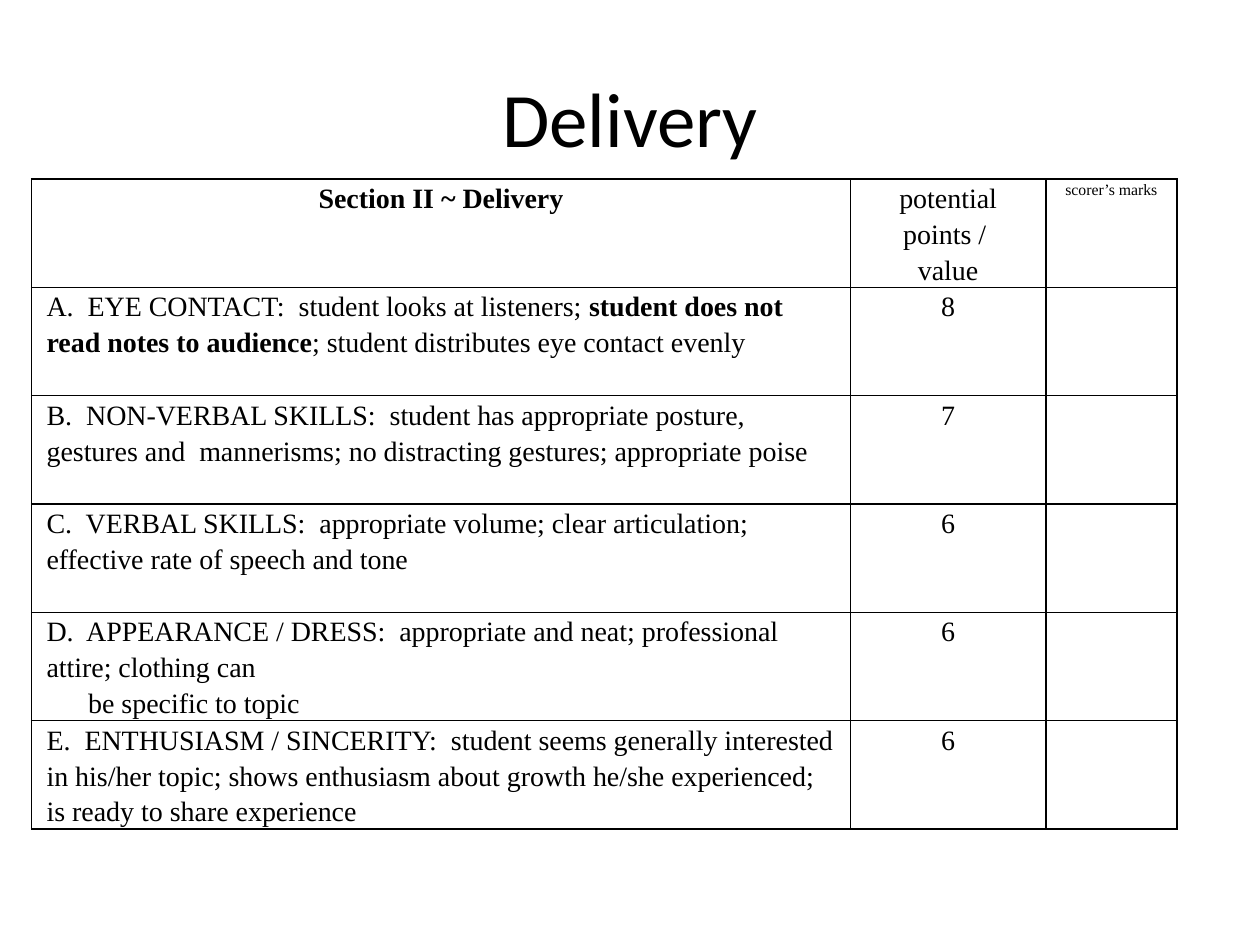
from dataclasses import dataclass

import lxml.etree
import pptx
import pptx.dml.color
import pptx.enum.text
import pptx.oxml.ns
import pptx.util
from pptx.util import Inches

ALIGN = pptx.enum.text.PP_ALIGN


@dataclass(frozen=True)
class Theme:
    ink: str = "000000"
    title_font: str = "Calibri"
    table_font: str = "Times New Roman"
    title_size: int = 44
    table_size: int = 16
    small_size: int = 9
    border_width: int = 1
    line_spacing: float = 1.15


THEME = Theme()
COLUMN_WIDTHS = (6.5, 1.55, 1.04)
ROW_HEIGHT = 0.86
CONTINUATION_INDENT = 0.33

# A cell is a list of paragraphs; a paragraph is a list of (text, bold) spans.
HEADER = (
    [[("Section II ~ Delivery", True)]],
    [[("potential points / ", False)], [("value", False)]],
    [[("scorer’s marks", False)]],
)
CRITERIA = (
    ([[("A.  EYE CONTACT:  student looks at listeners; ", False),
       ("student does not read notes to audience", True),
       ("; student distributes eye contact evenly", False)]], 8),
    ([[("B.  NON-VERBAL SKILLS:  student has appropriate posture, gestures and  "
        "mannerisms; no distracting gestures; appropriate poise", False)]], 7),
    ([[("C.  VERBAL SKILLS:  appropriate volume; clear articulation; "
        "effective rate of speech and tone", False)]], 6),
    ([[("D.  APPEARANCE / DRESS:  appropriate and neat; professional attire; "
        "clothing can", False)],
      [("be specific to topic", False)]], 6),
    ([[("E.  ENTHUSIASM / SINCERITY:  student seems generally interested in "
        "his/her topic; shows enthusiasm about growth he/she experienced; "
        "is ready to share experience", False)]], 6),
)


def style_font(font, name, size, bold=False):
    font.name = name
    font.size = pptx.util.Pt(size)
    font.bold = bold
    font.color.rgb = pptx.dml.color.RGBColor.from_string(THEME.ink)


def add_title(slide, text):
    title = slide.shapes.title
    title.left, title.top = Inches(0.5), Inches(0.3)
    title.width, title.height = Inches(9), Inches(1.25)
    title.text_frame.text = text
    title.text_frame.vertical_anchor = pptx.enum.text.MSO_ANCHOR.MIDDLE
    para = title.text_frame.paragraphs[0]
    para.alignment = ALIGN.CENTER
    style_font(para.runs[0].font, THEME.title_font, THEME.title_size)


def format_cell(cell):
    """Give the cell a plain border, no fill and its margins."""
    qn = pptx.oxml.ns.qn
    properties = cell._tc.get_or_add_tcPr()
    for side in ("a:lnL", "a:lnR", "a:lnT", "a:lnB"):
        line = lxml.etree.SubElement(
            properties, qn(side), w=str(pptx.util.Pt(THEME.border_width)))
        fill = lxml.etree.SubElement(line, qn("a:solidFill"))
        lxml.etree.SubElement(fill, qn("a:srgbClr"), val=THEME.ink)
    cell.fill.background()
    cell.margin_left = cell.margin_right = Inches(0.12)
    cell.margin_top = cell.margin_bottom = 0


def write_cell(cell, paragraphs, alignment, size=THEME.table_size):
    frame = cell.text_frame
    for index, spans in enumerate(paragraphs):
        para = frame.add_paragraph() if index else frame.paragraphs[0]
        para.alignment = alignment
        para.line_spacing = THEME.line_spacing
        if index and alignment == ALIGN.LEFT:
            para._p.get_or_add_pPr().set("marL", str(Inches(CONTINUATION_INDENT)))
        for text, bold in spans:
            span = para.add_run()
            span.text = text
            style_font(span.font, THEME.table_font, size, bold)


def add_score_table(slide):
    row_count = len(CRITERIA) + 1
    table = slide.shapes.add_table(
        row_count, len(COLUMN_WIDTHS), Inches(0.25), Inches(1.42),
        Inches(sum(COLUMN_WIDTHS)), Inches(ROW_HEIGHT * row_count)).table
    table.first_row = table.horz_banding = False
    for column, width in zip(table.columns, COLUMN_WIDTHS):
        column.width = Inches(width)
    for row in table.rows:
        row.height = Inches(ROW_HEIGHT)
    for cell in table.iter_cells():
        format_cell(cell)

    sizes = (THEME.table_size, THEME.table_size, THEME.small_size)
    for column, (paragraphs, size) in enumerate(zip(HEADER, sizes)):
        write_cell(table.cell(0, column), paragraphs, ALIGN.CENTER, size)
    for row, (paragraphs, points) in enumerate(CRITERIA, start=1):
        write_cell(table.cell(row, 0), paragraphs, ALIGN.LEFT)
        write_cell(table.cell(row, 1), [[(str(points), False)]], ALIGN.CENTER)


def main():
    deck = pptx.Presentation()
    deck.slide_width, deck.slide_height = Inches(10), Inches(7.5)
    title_only = deck.slide_layouts[5]
    slide = deck.slides.add_slide(title_only)
    add_title(slide, "Delivery")
    add_score_table(slide)
    deck.save("out.pptx")


if __name__ == "__main__":
    main()
